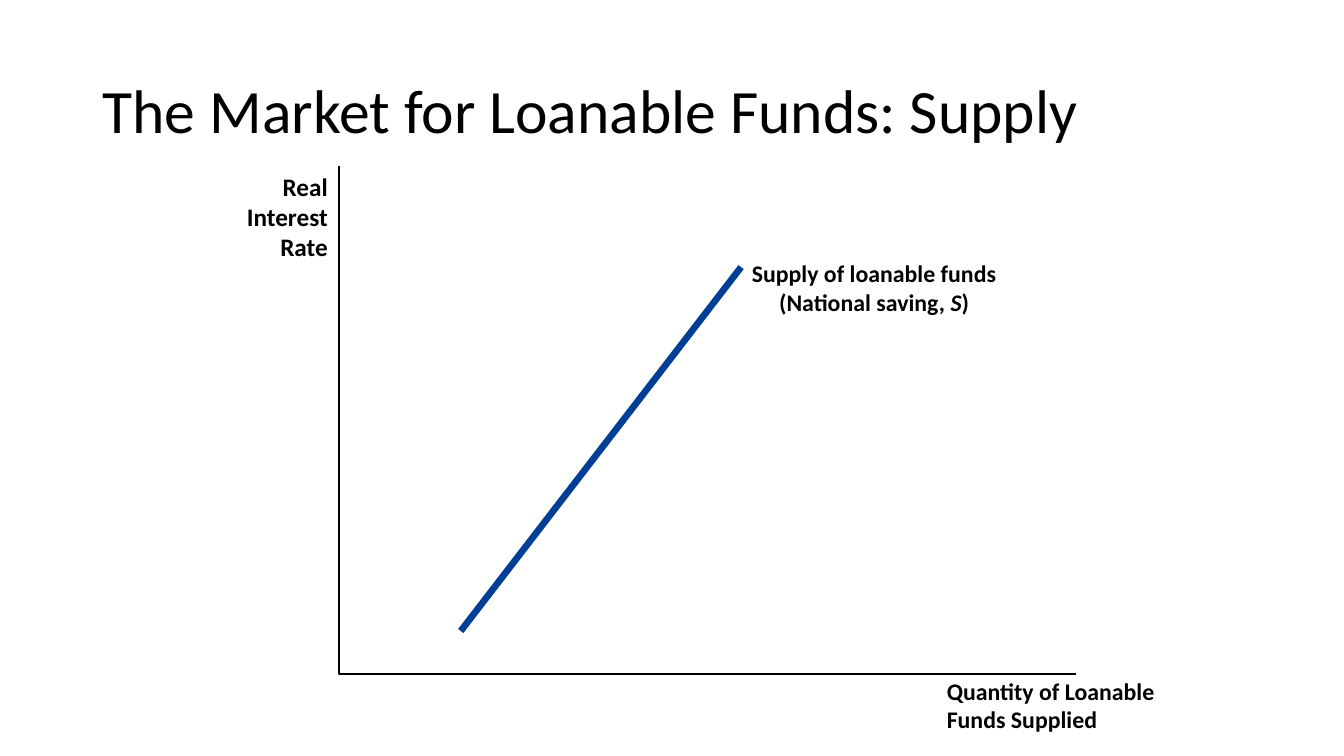
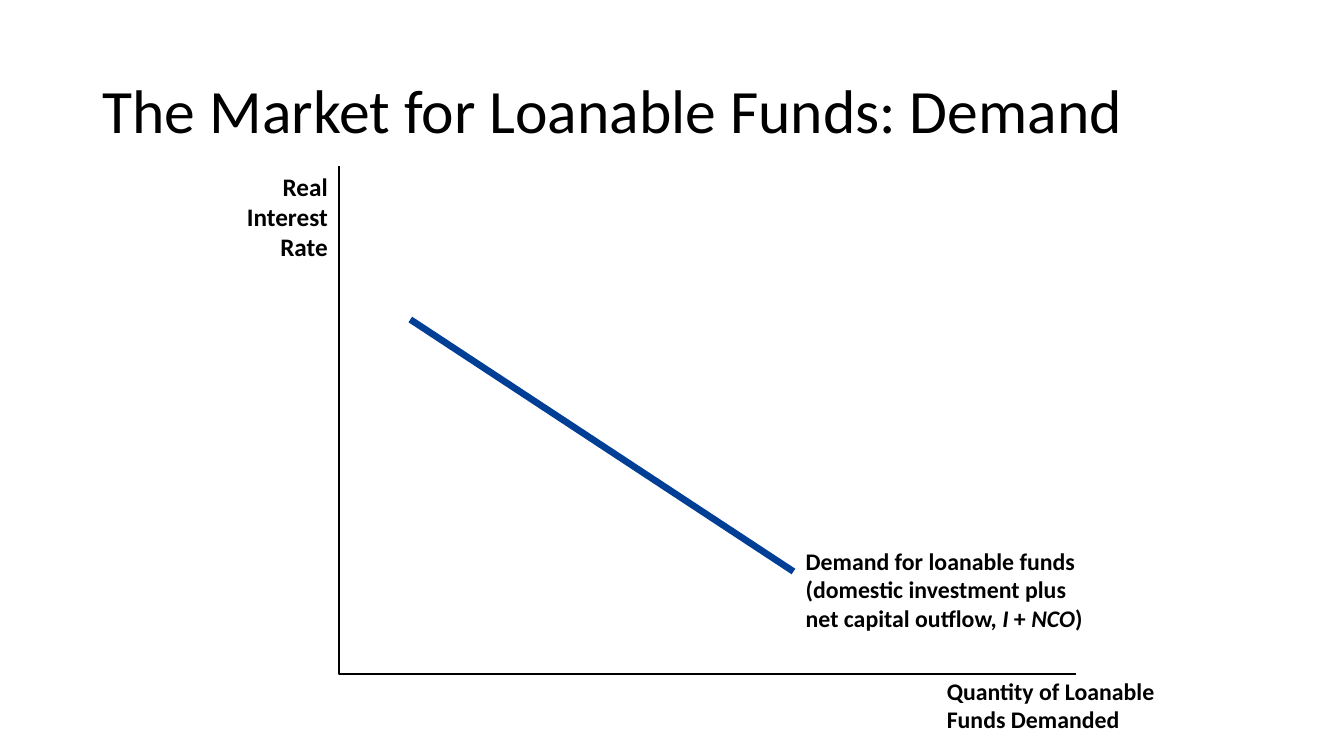
import pptx
import pptx.util
import pptx.dml.color
import pptx.enum.shapes
import pptx.enum.text
import pptx.oxml
from dataclasses import dataclass

PX = 9144
ALIGN = pptx.enum.text.PP_ALIGN
ANCHOR = pptx.enum.text.MSO_ANCHOR
FIT = pptx.enum.text.MSO_AUTO_SIZE


@dataclass(frozen=True)
class Theme:
    font: str = "Calibri"
    ink: str = "000000"
    blue: str = "003F95"
    head: int = 44
    axis: int = 18
    label: int = 17
    thin: float = 1.63
    thick: float = 4.75


THEME = Theme()
FLUSH = dict.fromkeys(("margin_left", "margin_top", "margin_right", "margin_bottom"), 0)


def px(*nums):
    return [pptx.util.Emu(num * PX) for num in nums]


def rgb(code):
    return pptx.dml.color.RGBColor.from_string(code)


def apply(item, values):
    for name, value in values.items():
        setattr(item, name, value)


def add_text(shapes, box, lines, size, bold=True, frame=None, para=None):
    text = shapes.add_textbox(*px(*box)).text_frame
    apply(text, {"word_wrap": True, "auto_size": FIT.NONE, **(frame or {})})
    for row, line in enumerate(lines):
        par = text.add_paragraph() if row else text.paragraphs[0]
        apply(par, para or {})
        for part, words in enumerate(line.split("*")):
            run = par.add_run()
            run.text = words
            apply(run.font, {"name": THEME.font, "size": pptx.util.Pt(size),
                             "bold": bold, "italic": part % 2 == 1})
            run.font.color.rgb = rgb(THEME.ink)


def set_line(shape, color, width):
    shape.line.color.rgb = rgb(color)
    shape.line.width = pptx.util.Pt(width)


def add_axes(shapes):
    path = shapes.build_freeform(336, 165, scale=PX)
    path.add_line_segments([(336, 669), (1067, 669)], close=False)
    axes = path.convert_to_shape()
    axes.fill.background()
    axes.shadow.inherit = False
    set_line(axes, THEME.ink, THEME.thin)


def add_curve(shapes, ends, box, lines, align):
    group = shapes.add_group_shape().shapes
    kind = pptx.enum.shapes.MSO_CONNECTOR.STRAIGHT
    curve = group.add_connector(kind, *px(*ends))
    set_line(curve, THEME.blue, THEME.thick)
    curve.element.spPr.append(pptx.oxml.parse_xml(
        '<a:effectLst xmlns:a="http://schemas.openxmlformats.org/drawingml/2006/main"/>'))
    add_text(group, box, lines, THEME.label,
             frame={**FLUSH, "word_wrap": False}, para={"alignment": align})


def add_graph(deck, side, state, curve):
    shapes = deck.slides.add_slide(deck.slide_layouts[6]).shapes
    add_axes(shapes)
    add_text(shapes, (939, 671, 209, 57), [f"Quantity of Loanable Funds {state}"],
             THEME.label, frame=FLUSH)
    add_curve(shapes, **curve)
    add_text(shapes, (92, 40, 1150, 145), [f"The Market for Loanable Funds: {side}"],
             THEME.head, bold=False, frame={"vertical_anchor": ANCHOR.MIDDLE},
             para={"line_spacing": 0.9})
    add_text(shapes, (211, 165, 124, 101), ["Real Interest Rate"], THEME.axis,
             para={"alignment": ALIGN.RIGHT})


def main():
    deck = pptx.Presentation()
    deck.slide_width, deck.slide_height = px(1333, 750)
    add_graph(deck, "Supply", "Supplied", {
        "ends": (457, 626, 735, 265),
        "box": (745, 257, 244, 57),
        "lines": ["Supply of loanable funds", "(National saving, *S*)"],
        "align": ALIGN.CENTER,
    })
    add_graph(deck, "Demand", "Demanded", {
        "ends": (787, 567, 407, 317),
        "box": (799, 542, 278, 86),
        "lines": ["Demand for loanable funds", "(domestic investment plus",
                  "net capital outflow, *I* + *NCO*)"],
        "align": ALIGN.LEFT,
    })
    deck.save("out.pptx")


if __name__ == "__main__":
    main()
